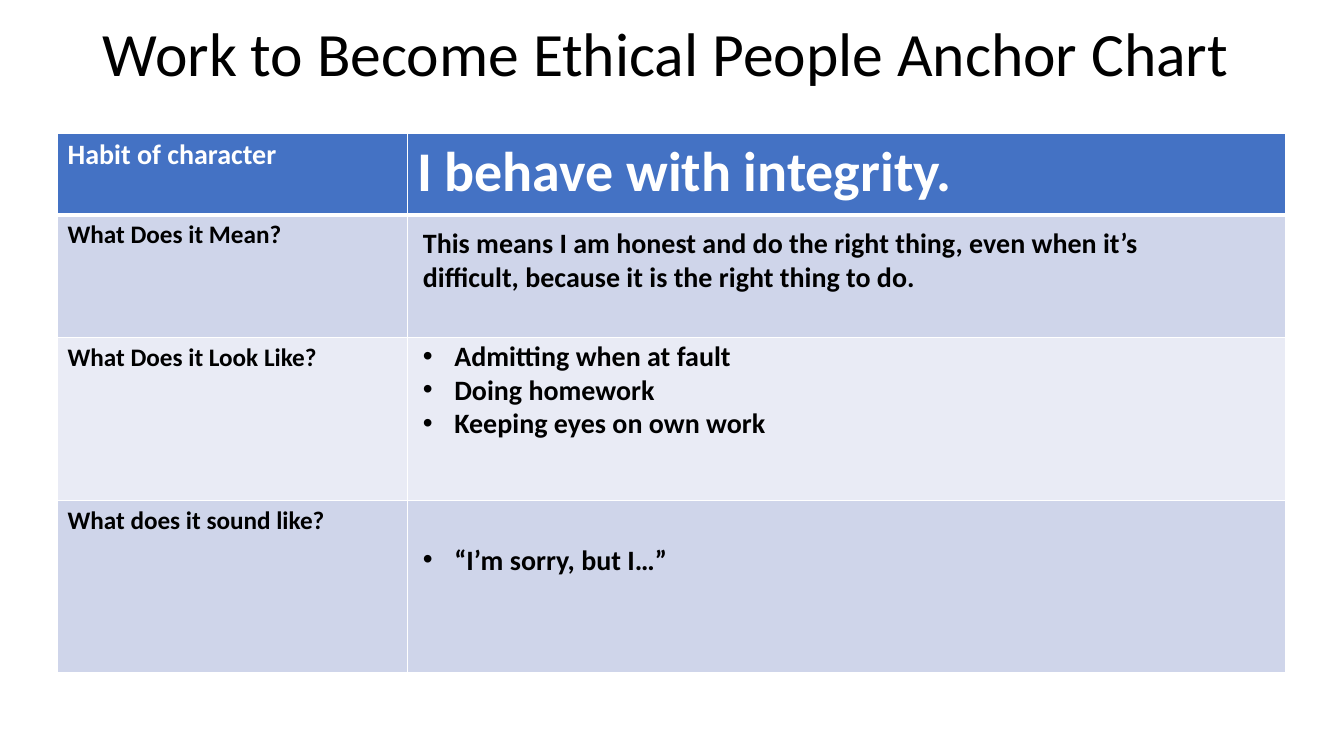
from dataclasses import dataclass

from lxml import etree
from pptx import Presentation
from pptx.dml.color import RGBColor
from pptx.enum.text import MSO_ANCHOR, MSO_AUTO_SIZE, PP_ALIGN
from pptx.oxml.ns import qn
from pptx.util import Cm, Pt

LEFT = PP_ALIGN.LEFT
MIDDLE = MSO_ANCHOR.MIDDLE
GROW = MSO_AUTO_SIZE.SHAPE_TO_FIT_TEXT
TITLE_ONLY = 5


@dataclass(frozen=True)
class Theme:
    font: str = "Calibri"
    black: str = "000000"
    white: str = "FFFFFF"
    header: str = "4472C4"
    bands: tuple = ("CFD5EA", "E9EBF5")
    title: int = 44
    habit: int = 40
    body: int = 20
    label: int = 18
    rule: int = 1
    header_rule: int = 3


THEME = Theme()
LABELS = ["Habit of character", "What Does it Mean?",
          "What Does it Look Like?", "What does it sound like?"]
HABIT = "I behave with integrity."
MEANING = ("This means I am honest and do the right thing, even when it’s "
           "difficult, because it is the right thing to do.")
LOOKS_LIKE = ["Admitting when at fault", "Doing homework", "Keeping eyes on own work"]
SOUNDS_LIKE = ["“I’m sorry, but I…”"]
COLUMN_WIDTHS = [8.81, 22.15]
ROW_HEIGHTS = [2.06, 3.1, 4.11, 4.32]


def write(para, text, size=THEME.body, color=THEME.black, bold=True):
    span = para.add_run()
    span.text = text
    span.font.name = THEME.font
    span.font.size = Pt(size)
    span.font.bold = bold
    span.font.color.rgb = RGBColor.from_string(color)


def add_bullet(para):
    properties = para._p.get_or_add_pPr()
    properties.set("marL", str(Cm(0.79)))
    properties.set("indent", str(-Cm(0.79)))
    etree.SubElement(properties, qn("a:buFont"), typeface="Arial")
    etree.SubElement(properties, qn("a:buChar"), char="•")


def add_title(page, text):
    box = page.shapes.title
    box.left, box.top, box.width, box.height = Cm(2.34), Cm(0.2), Cm(29.21), Cm(2.44)
    box.text_frame.vertical_anchor = MIDDLE
    para = box.text_frame.paragraphs[0]
    para.alignment = LEFT
    para.line_spacing = 0.9
    write(para, text, size=THEME.title, bold=False)


def add_text(page, top, width, height, lines, bulleted=False):
    box = page.shapes.add_textbox(Cm(10.41), Cm(top), Cm(width), Cm(height))
    frame = box.text_frame
    frame.word_wrap = True
    frame.auto_size = GROW
    for index, line in enumerate(lines):
        para = frame.add_paragraph() if index else frame.paragraphs[0]
        if bulleted:
            add_bullet(para)
        write(para, line)


def style_cell(cell, row):
    properties = cell._tc.get_or_add_tcPr()
    top = THEME.header_rule if row == 1 else THEME.rule
    bottom = THEME.header_rule if row == 0 else THEME.rule
    sides = {"lnL": THEME.rule, "lnR": THEME.rule, "lnT": top, "lnB": bottom}
    for side, width in sides.items():
        line = etree.SubElement(properties, qn(f"a:{side}"), w=str(Pt(width)))
        fill = etree.SubElement(line, qn("a:solidFill"))
        etree.SubElement(fill, qn("a:srgbClr"), val=THEME.white)
    color = THEME.bands[(row - 1) % 2] if row else THEME.header
    cell.fill.solid()
    cell.fill.fore_color.rgb = RGBColor.from_string(color)


def add_chart_table(page):
    table = page.shapes.add_table(
        len(ROW_HEIGHTS), len(COLUMN_WIDTHS), Cm(1.45), Cm(3.35),
        Cm(sum(COLUMN_WIDTHS)), Cm(sum(ROW_HEIGHTS))).table
    for column, width in zip(table.columns, COLUMN_WIDTHS):
        column.width = Cm(width)
    for index, (row, height) in enumerate(zip(table.rows, ROW_HEIGHTS)):
        row.height = Cm(height)
        for cell in row.cells:
            style_cell(cell, index)
        write(row.cells[0].text_frame.paragraphs[0], LABELS[index],
              size=THEME.label if index else THEME.body,
              color=THEME.black if index else THEME.white)
    write(table.cell(0, 1).text_frame.paragraphs[0], HABIT,
          size=THEME.habit, color=THEME.white)


def main():
    deck = Presentation()
    deck.slide_width, deck.slide_height = Cm(33.87), Cm(19.05)
    page = deck.slides.add_slide(deck.slide_layouts[TITLE_ONLY])
    add_title(page, "Work to Become Ethical People Anchor Chart")
    add_chart_table(page)
    add_text(page, 5.56, 21.03, 1.96, [MEANING])
    add_text(page, 8.41, 21.21, 2.82, LOOKS_LIKE, bulleted=True)
    add_text(page, 13.54, 21.21, 1.12, SOUNDS_LIKE, bulleted=True)
    deck.save("out.pptx")


if __name__ == "__main__":
    main()
